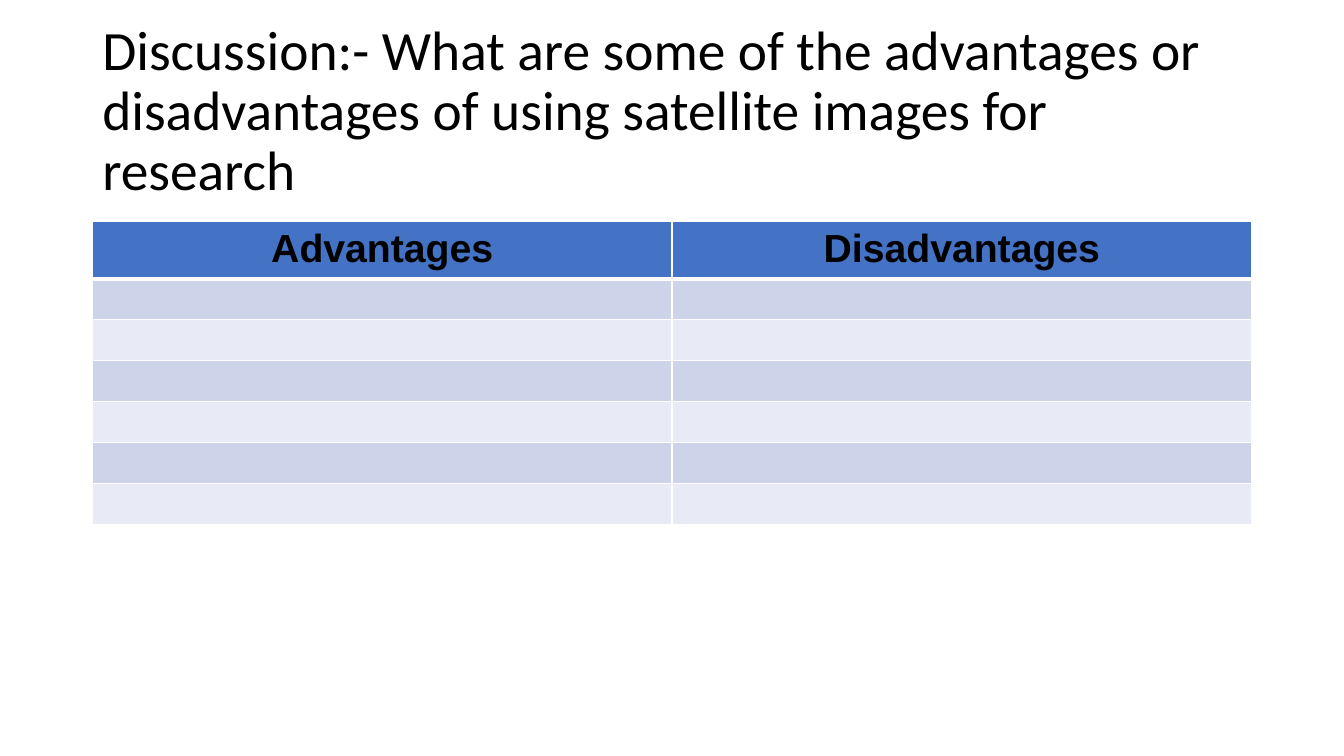
import pptx
import pptx.dml.color
import pptx.enum.text
import pptx.oxml
import pptx.oxml.ns
import pptx.util

PX = 9525  # EMU per px, 96 px to the inch
BLACK = pptx.dml.color.RGBColor(0x00, 0x00, 0x00)
WHITE = pptx.dml.color.RGBColor(0xFF, 0xFF, 0xFF)
HEADER_BLUE = pptx.dml.color.RGBColor(0x44, 0x72, 0xC4)
BAND_DARK = pptx.dml.color.RGBColor(0xCD, 0xD4, 0xEA)
BAND_LIGHT = pptx.dml.color.RGBColor(0xE8, 0xEB, 0xF5)

LEFT, WIDTH = 88, 1104
ROW_COUNT, ROW_HEIGHT = 7, 39
HEADINGS = ["Advantages", "Disadvantages"]


def set_border(cell, side, points):
    """Add a solid white line; call before the cell is filled."""
    line = pptx.oxml.parse_xml(
        f'<a:{side} {pptx.oxml.ns.nsdecls("a")} w="{pptx.util.Pt(points)}">'
        f'<a:solidFill><a:srgbClr val="{WHITE}"/></a:solidFill></a:{side}>'
    )
    cell._tc.get_or_add_tcPr().append(line)


presentation = pptx.Presentation()
presentation.slide_width = 1280 * PX
presentation.slide_height = 720 * PX
slide = presentation.slides.add_slide(presentation.slide_layouts[6])

# Title
title = slide.shapes.add_textbox(LEFT * PX, 38 * PX, WIDTH * PX, 139 * PX)
title_frame = title.text_frame
title_frame.word_wrap = True
title_frame.vertical_anchor = pptx.enum.text.MSO_ANCHOR.MIDDLE
paragraph = title_frame.paragraphs[0]
paragraph.text = (
    "Discussion:- What are some of the advantages or "
    "disadvantages of using satellite images for research"
)
paragraph.line_spacing = 0.9
paragraph.font.name = "Calibri"
paragraph.font.size = pptx.util.Pt(39.6)
paragraph.font.color.rgb = BLACK

# Table with an empty banded body
table = slide.shapes.add_table(
    ROW_COUNT, len(HEADINGS), LEFT * PX, 211 * PX, WIDTH * PX, ROW_COUNT * ROW_HEIGHT * PX
).table
for row_index in range(ROW_COUNT):
    for column_index in range(len(HEADINGS)):
        cell = table.cell(row_index, column_index)
        for side in ("lnL", "lnR", "lnT", "lnB"):
            header_edge = (row_index, side) in ((0, "lnB"), (1, "lnT"))
            set_border(cell, side, 3 if header_edge else 1)
        cell.fill.solid()
        if row_index == 0:
            cell.fill.fore_color.rgb = HEADER_BLUE
        else:
            cell.fill.fore_color.rgb = BAND_DARK if row_index % 2 else BAND_LIGHT

# Column headings
for column_index, heading in enumerate(HEADINGS):
    paragraph = table.cell(0, column_index).text_frame.paragraphs[0]
    paragraph.text = heading
    paragraph.alignment = pptx.enum.text.PP_ALIGN.CENTER
    paragraph.font.name = "Arial"
    paragraph.font.size = pptx.util.Pt(28)
    paragraph.font.bold = True
    paragraph.font.color.rgb = BLACK

presentation.save("out.pptx")
